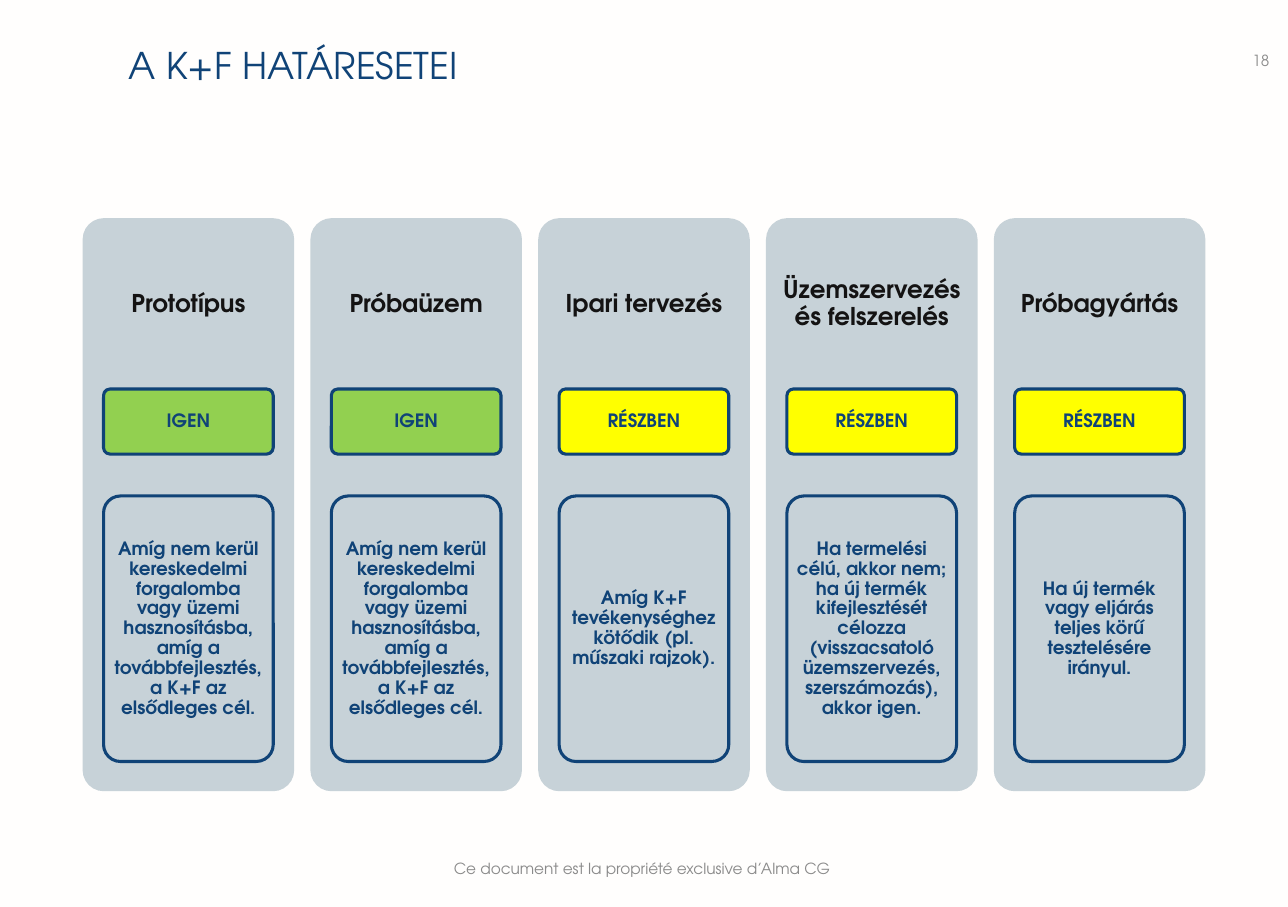
from pptx import Presentation
from pptx.dml.color import RGBColor
from pptx.enum.shapes import MSO_SHAPE
from pptx.enum.text import MSO_ANCHOR, PP_ALIGN
from pptx.util import Inches, Pt

FONT = "TeX Gyre Adventor"
NAVY, BLACK, GREY = "104377", "141313", "8A8A8A"
PANEL, GREEN, YELLOW = "C7D2D8", "92D050", "FFFF00"
LEFT, LAST, COUNT = 0.75, 9.02, 5
STEP = (LAST - LEFT) / (COUNT - 1)
WIDTH, INNER = 1.92, 1.54
PAD = (WIDTH - INNER) / 2

TRIAL = ("Amíg nem kerül kereskedelmi forgalomba vagy üzemi hasznosításba, "
         "amíg a továbbfejlesztés, a K+F az elsődleges cél.")
CASES = [
    ("Prototípus", "IGEN", TRIAL),
    ("Próbaüzem", "IGEN", TRIAL),
    ("Ipari tervezés", "RÉSZBEN",
     "Amíg K+F tevékenységhez kötődik (pl. műszaki rajzok)."),
    ("Üzemszervezés és felszerelés", "RÉSZBEN",
     "Ha termelési célú, akkor nem; ha új termék kifejlesztését célozza "
     "(visszacsatoló üzemszervezés, szerszámozás), akkor igen."),
    ("Próbagyártás", "RÉSZBEN",
     "Ha új termék vagy eljárás teljes körű tesztelésére irányul."),
]
FILLS = {"IGEN": GREEN, "RÉSZBEN": YELLOW}


def paint(target, color):
    """Give a fill a solid colour."""
    target.solid()
    target.fore_color.rgb = RGBColor.from_string(color)


def write(shape, text, size, color, align=PP_ALIGN.CENTER,
          anchor=MSO_ANCHOR.MIDDLE, side=0.11, edge=0.06, bold=False,
          pitch=None):
    """Put one run of text into a shape."""
    frame = shape.text_frame
    frame.word_wrap = True
    frame.vertical_anchor = anchor
    frame.margin_left = frame.margin_right = Inches(side)
    frame.margin_top = frame.margin_bottom = Inches(edge)
    para = frame.paragraphs[0]
    para.alignment = align
    para.line_spacing = pitch
    run = para.add_run()
    run.text = text
    run.font.name = FONT
    run.font.size = Pt(size)
    run.font.bold = bold
    paint(run.font.fill, color)


def label(slide, box, text, size, color, **style):
    """Add a text box."""
    shape = slide.shapes.add_textbox(*map(Inches, box))
    write(shape, text, size, color, **style)


def panel(slide, box, fill=None, line=None):
    """Add a rounded box and return it."""
    shape = slide.shapes.add_shape(MSO_SHAPE.ROUNDED_RECTANGLE,
                                   *map(Inches, box))
    shape.adjustments[0] = 0.1
    shape.shadow.inherit = False
    if fill:
        paint(shape.fill, fill)
    else:
        shape.fill.background()
    if line:
        paint(shape.line.fill, line)
        shape.line.width = Pt(2)
    else:
        shape.line.fill.background()
    return shape


def column(slide, left, name, answer, note):
    """Add one case with its heading, answer and note."""
    panel(slide, (left, 1.98, WIDTH, 5.2), PANEL)
    label(slide, (left, 1.98, WIDTH, 1.56), name, 16, BLACK,
          side=0.07, edge=0.07, bold=True, pitch=0.9)
    inner = left + PAD
    verdict = panel(slide, (inner, 3.53, INNER, 0.59), FILLS[answer], NAVY)
    detail = panel(slide, (inner, 4.5, INNER, 2.41), line=NAVY)
    for shape, text in ((verdict, answer), (detail, note)):
        write(shape, text, 12, NAVY, side=0.03, edge=0.03, bold=True,
              pitch=0.9)


def main():
    """Build and save the slide."""
    deck = Presentation()
    deck.slide_width, deck.slide_height = Inches(11.69), Inches(8.23)
    slide = deck.slides.add_slide(deck.slide_layouts[6])
    paint(slide.background.fill, "FFFEFD")
    label(slide, (3.23, 7.66, 5.23, 0.44),
          "Ce document est la propriété exclusive d’Alma CG\u00a0", 10, GREY)
    label(slide, (10.29, 0.33, 1.34, 0.44), "18", 10, GREY,
          align=PP_ALIGN.RIGHT)
    label(slide, (1.06, 0.33, 7.92, 0.91), "A K+F HATÁRESETEI", 24, NAVY,
          align=PP_ALIGN.LEFT, anchor=MSO_ANCHOR.TOP)
    for index, case in enumerate(CASES):
        column(slide, LEFT + index * STEP, *case)
    deck.save("out.pptx")


if __name__ == "__main__":
    main()
